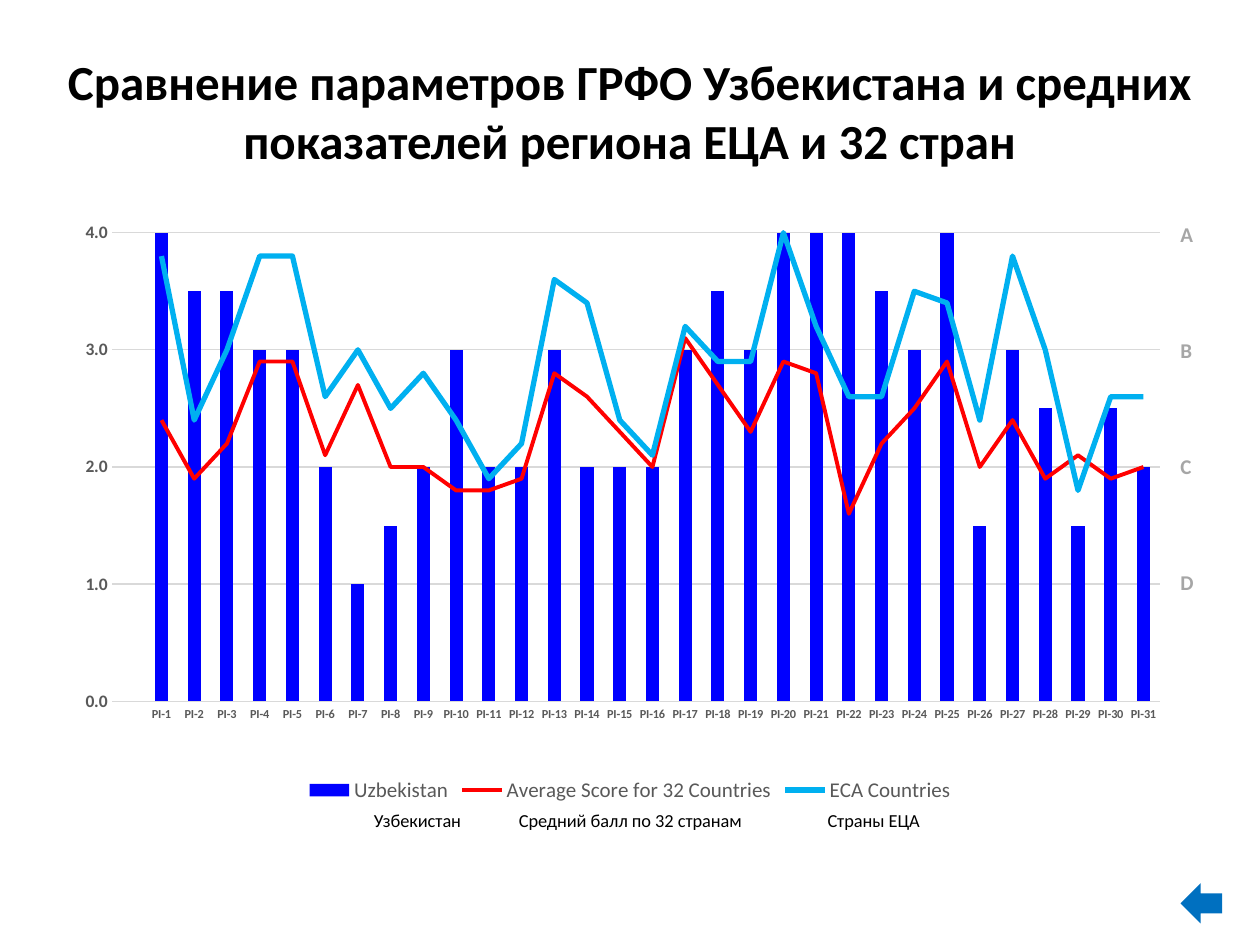
from dataclasses import dataclass

from pptx import Presentation
from pptx import util as u
from pptx.chart.data import CategoryChartData
from pptx.dml.color import RGBColor
from pptx.enum import chart as charts, shapes, text
from pptx.oxml import parse_xml
from pptx.oxml.ns import nsdecls, qn


@dataclass(frozen=True)
class Theme:
    font: str = "Calibri"
    black: str = "000000"
    grey: str = "595959"
    grade: str = "A6A6A6"
    grid: str = "D9D9D9"
    arrow: str = "0070C0"
    uzbekistan: str = "0000FF"
    average: str = "FF0000"
    region: str = "00B0F0"
    title_size: float = 28
    grade_size: float = 12
    legend_size: float = 12
    caption_size: float = 10.5
    value_size: float = 10
    category_size: float = 7


THEME = Theme()

TITLE = ("Сравнение параметров ГРФО Узбекистана и средних "
         "показателей региона ЕЦА и 32 стран")
# The first category is an empty slot beside the value axis.
CATEGORIES = [""] + [f"PI-{number}" for number in range(1, 32)]
SCORES = {
    "Uzbekistan": [
        None, 4, 3.5, 3.5, 3, 3, 2, 1, 1.5, 2, 3, 2, 2, 3, 2, 2, 2, 3, 3.5, 3,
        4, 4, 4, 3.5, 3, 4, 1.5, 3, 2.5, 1.5, 2.5, 2],
    "Average Score for 32 Countries": [
        None, 2.4, 1.9, 2.2, 2.9, 2.9, 2.1, 2.7, 2, 2, 1.8, 1.8, 1.9, 2.8, 2.6,
        2.3, 2, 3.1, 2.7, 2.3, 2.9, 2.8, 1.6, 2.2, 2.5, 2.9, 2, 2.4, 1.9, 2.1,
        1.9, 2],
    "ECA Countries": [
        None, 3.8, 2.4, 3, 3.8, 3.8, 2.6, 3, 2.5, 2.8, 2.4, 1.9, 2.2, 3.6, 3.4,
        2.4, 2.1, 3.2, 2.9, 2.9, 4, 3.2, 2.6, 2.6, 3.5, 3.4, 2.4, 3.8, 3, 1.8,
        2.6, 2.6],
}
LINE_STYLES = [(THEME.average, 2.25), (THEME.region, 3)]
CAPTION_STOPS = [(105.7, "Узбекистан"), (188.6, "Средний балл по 32 странам"),
                 (365, "Страны ЕЦА")]


def points(*lengths):
    return [u.Pt(length) for length in lengths]


def set_font(font, size, color, bold=False):
    font.name, font.size, font.bold = THEME.font, u.Pt(size), bold
    font.color.rgb = RGBColor.from_string(color)


def set_line(line, color, width):
    line.color.rgb = RGBColor.from_string(color)
    line.width = u.Pt(width)


def add_text(slide, frame, lines, size, color, bold=False,
             align=text.PP_ALIGN.LEFT, top_inset=3.6, gap=0):
    """Add a text box with one paragraph per line; gap is the space between."""
    box = slide.shapes.add_textbox(*points(*frame)).text_frame
    box.word_wrap = True
    box.margin_top = u.Pt(top_inset)
    for index, line in enumerate(lines):
        para = box.add_paragraph() if index else box.paragraphs[0]
        para.text = line
        para.alignment = align
        para.space_before = u.Pt(gap if index else 0)
        set_font(para.font, size, color, bold)
    return box


def add_caption(slide):
    """Add the translated legend names, placed with tab stops."""
    line = "".join("\t" + name for _, name in CAPTION_STOPS)
    box = add_text(slide, (100.8, 458.6, 617.8, 20), [line],
                   THEME.caption_size, THEME.black)
    stops = "".join(f'<a:tab pos="{u.Pt(stop)}" algn="l"/>'
                    for stop, _ in CAPTION_STOPS)
    tabs = parse_xml(f'<a:tabLst {nsdecls("a")}>{stops}</a:tabLst>')
    properties = box.paragraphs[0]._p.get_or_add_pPr()
    properties.insert_element_before(tabs, "a:defRPr", "a:extLst")


def move_to_lines(chart):
    """Turn every series after the first into a line on the same axes."""
    bars = chart.plots[0]._element
    lines = parse_xml(
        f'<c:lineChart {nsdecls("c")}><c:grouping val="standard"/>'
        '<c:varyColors val="0"/><c:marker val="1"/></c:lineChart>')
    marker = lines.find(qn("c:marker"))
    for series in bars.findall(qn("c:ser"))[1:]:
        for flag in series.findall(qn("c:invertIfNegative")):
            series.remove(flag)
        marker.addprevious(series)
    for axis in bars.findall(qn("c:axId")):
        lines.append(parse_xml(
            f'<c:axId {nsdecls("c")} val="{axis.get("val")}"/>'))
    bars.addnext(lines)


def place_plot(chart, x, y, w, h):
    """Fix the inner plot area, in fractions of the chart."""
    area = chart._chartSpace.chart.plotArea
    for layout in area.findall(qn("c:layout")):
        area.remove(layout)
    sizes = "".join(f'<c:{tag} val="{value}"/>'
                    for tag, value in zip("xywh", (x, y, w, h)))
    area.insert(0, parse_xml(
        f'<c:layout {nsdecls("c")}><c:manualLayout>'
        '<c:layoutTarget val="inner"/><c:xMode val="edge"/>'
        f'<c:yMode val="edge"/>{sizes}</c:manualLayout></c:layout>'))


def style_axes(chart):
    sizes = [(chart.category_axis, THEME.category_size),
             (chart.value_axis, THEME.value_size)]
    for axis, size in sizes:
        axis.major_tick_mark = axis.minor_tick_mark = charts.XL_TICK_MARK.NONE
        set_font(axis.tick_labels.font, size, THEME.grey, bold=True)
    set_line(chart.category_axis.format.line, THEME.grid, 0.75)

    values = chart.value_axis
    values.minimum_scale, values.maximum_scale, values.major_unit = 0, 4, 1
    values.tick_labels.number_format = "0.0"
    values.tick_labels.number_format_is_linked = False
    values.format.line.fill.background()
    set_line(values.major_gridlines.format.line, THEME.grid, 0.75)


def add_score_chart(slide):
    data = CategoryChartData(number_format="0.0")
    data.categories = CATEGORIES
    for name, values in SCORES.items():
        data.add_series(name, values)
    chart = slide.shapes.add_chart(
        charts.XL_CHART_TYPE.COLUMN_CLUSTERED,
        *points(7.9, 104.4, 704.2, 357.1), data).chart
    set_font(chart.font, THEME.value_size, THEME.black)
    chart.has_title = False
    chart.has_legend = True
    chart.legend.position = charts.XL_LEGEND_POSITION.BOTTOM
    chart.legend.include_in_layout = False
    set_font(chart.legend.font, THEME.legend_size, THEME.grey)
    style_axes(chart)
    place_plot(chart, 0.08, 0.08, 0.85, 0.75)
    move_to_lines(chart)

    columns, lines = chart.plots
    columns.gap_width = 150
    columns.vary_by_categories = False
    fill = columns.series[0].format.fill
    fill.solid()
    fill.fore_color.rgb = RGBColor.from_string(THEME.uzbekistan)
    for series, (color, width) in zip(lines.series, LINE_STYLES):
        set_line(series.format.line, color, width)
        series.marker.style = charts.XL_MARKER_STYLE.NONE
        series.smooth = False


def add_back_arrow(slide):
    arrow = slide.shapes.add_shape(shapes.MSO_SHAPE.RIGHT_ARROW,
                                   *points(674.6, 504.7, 23.8, 23))
    arrow.rotation = 180
    arrow.shadow.inherit = False
    arrow.fill.solid()
    arrow.fill.fore_color.rgb = RGBColor.from_string(THEME.arrow)
    arrow.line.fill.background()


def main():
    deck = Presentation()
    deck.slide_width, deck.slide_height = points(720, 540)
    slide = deck.slides.add_slide(deck.slide_layouts[6])
    add_score_chart(slide)
    grades = add_text(slide, (667.4, 93.6, 18.7, 313.9), "ABCD",
                      THEME.grade_size, THEME.grade, bold=True,
                      top_inset=32.9, gap=52)
    grades.margin_right = 0
    add_text(slide, (5.8, 23.8, 707.8, 90), [TITLE], THEME.title_size,
             THEME.black, bold=True, align=text.PP_ALIGN.CENTER, top_inset=5.5)
    add_back_arrow(slide)
    add_caption(slide)
    deck.save("out.pptx")


if __name__ == "__main__":
    main()
